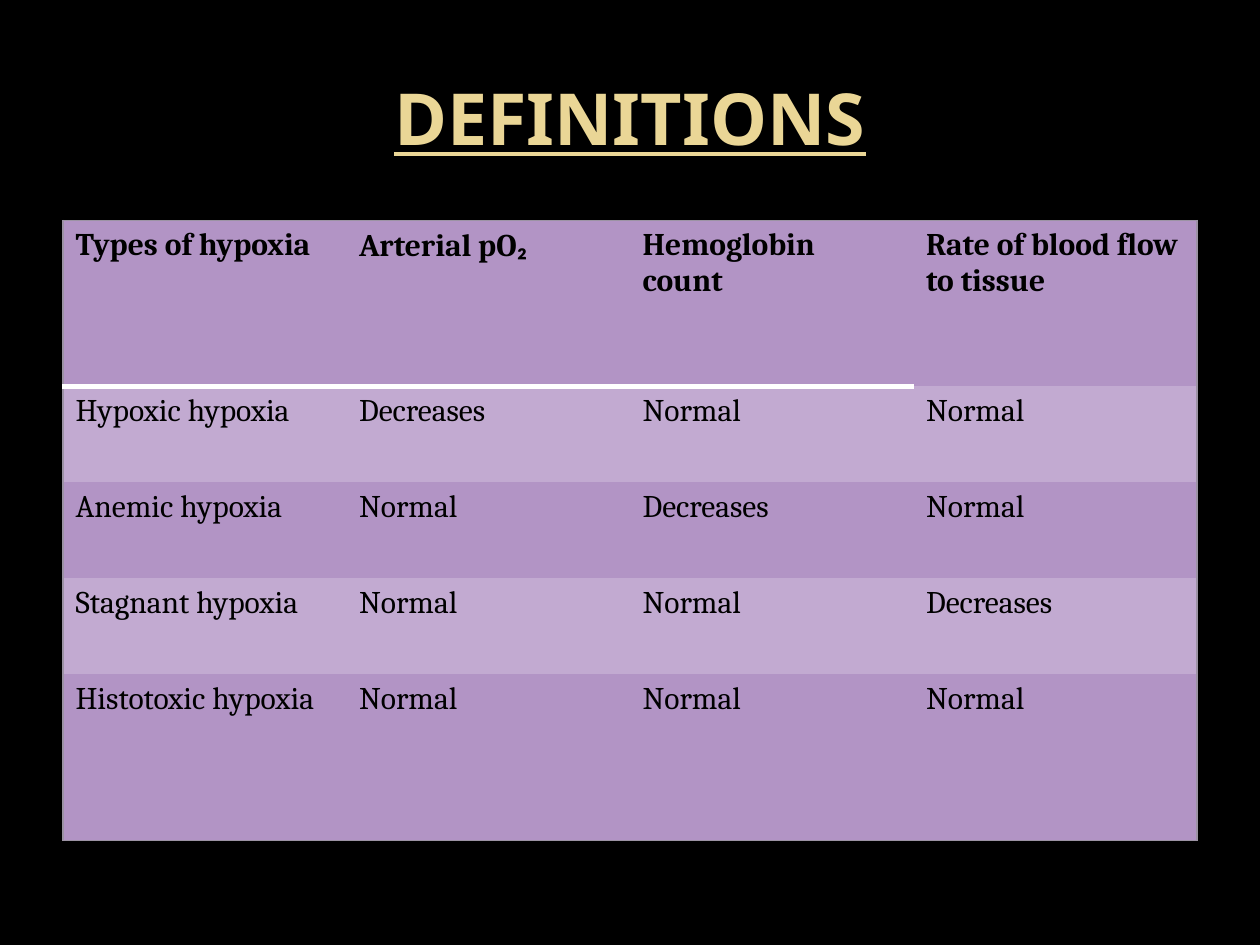
import pptx
import pptx.util
import pptx.oxml
import pptx.oxml.ns
import pptx.dml.color
import pptx.enum.text
import dataclasses

Pt = pptx.util.Pt
RGB = pptx.dml.color.RGBColor.from_string
TEXT = pptx.enum.text


@dataclasses.dataclass(frozen=True)
class Theme:
    back: str = "000000"
    gold: str = "EAD696"
    ink: str = "000000"
    dark: str = "B294C5"
    light: str = "C2AAD1"
    edge: str = "9C93A4"
    rule: str = "FFFFFF"
    head: float = 41
    body: float = 18
    plain: str = "{2D5ABB26-0587-4C30-8999-92F81FD0307C}"


class Deck:
    def __init__(self, theme):
        self.theme = theme
        self.show = pptx.Presentation()
        self.show.slide_width, self.show.slide_height = Pt(720), Pt(540)
        self.slide = self.show.slides.add_slide(self.show.slide_layouts[6])
        self.fill(self.slide.background, theme.back)

    def fill(self, item, color):
        item.fill.solid()
        item.fill.fore_color.rgb = RGB(color)

    def label(self, para, text, color, **form):
        run = para.add_run()
        run.text = text
        run.font.color.rgb = RGB(color)
        for key, value in form.items():
            setattr(run.font, key, value)

    def title(self, text, left, top, width, height):
        box = self.slide.shapes.add_textbox(Pt(left), Pt(top), Pt(width), Pt(height))
        frame = box.text_frame
        form = {"word_wrap": True, "auto_size": TEXT.MSO_AUTO_SIZE.NONE,
                "vertical_anchor": TEXT.MSO_ANCHOR.MIDDLE}
        for key, value in form.items():
            setattr(frame, key, value)
        para = frame.paragraphs[0]
        para.alignment = TEXT.PP_ALIGN.CENTER
        self.label(para, text, self.theme.gold, name="Noto Sans",
                   size=Pt(self.theme.head), bold=True, underline=True)

    def border(self, cell, sides):
        props = cell._tc.get_or_add_tcPr()
        for spot, side in enumerate(s for s in "LRTB" if s in sides):
            color, width = sides[side]
            props.insert(spot, pptx.oxml.parse_xml(
                f'<a:ln{side} {pptx.oxml.ns.nsdecls("a")} w="{Pt(width)}">'
                f'<a:solidFill><a:srgbClr val="{color}"/></a:solidFill></a:ln{side}>'))

    def table(self, rows, left, top, widths, heights):
        theme = self.theme
        last, end = len(rows) - 1, len(widths) - 1
        grid = self.slide.shapes.add_table(
            len(rows), len(widths), Pt(left), Pt(top),
            Pt(sum(widths)), Pt(sum(heights))).table
        grid.first_row = grid.horz_banding = False
        grid._tbl.tblPr.find(pptx.oxml.ns.qn("a:tableStyleId")).text = theme.plain
        for col, width in zip(grid.columns, widths):
            col.width = Pt(width)
        for r, (row, height) in enumerate(zip(rows, heights)):
            grid.rows[r].height = Pt(height)
            for c, text in enumerate(row):
                cell = grid.cell(r, c)
                self.fill(cell, theme.light if r % 2 else theme.dark)
                edges = {"L": c == 0, "R": c == end, "T": r == 0, "B": r == last}
                sides = {s: (theme.edge, 0.75) for s, on in edges.items() if on}
                if r == 0 and c < end:
                    sides["B"] = (theme.rule, 3)
                self.border(cell, sides)
                base, sub, _ = text.partition("₂")
                for part, font in ((base, "Cambria"), (sub, "Calibri")):
                    if part:
                        self.label(cell.text_frame.paragraphs[0], part, theme.ink,
                                   name=font, size=Pt(theme.body), bold=r == 0)


def main():
    deck = Deck(Theme())
    deck.title("DEFINITIONS", 36, 21.6, 648, 90)
    rows = [
        ("Types of hypoxia", "Arterial pO₂", "Hemoglobin count",
         "Rate of blood flow to tissue"),
        ("Hypoxic hypoxia", "Decreases", "Normal", "Normal"),
        ("Anemic hypoxia", "Normal", "Decreases", "Normal"),
        ("Stagnant hypoxia", "Normal", "Normal", "Decreases"),
        ("Histotoxic hypoxia", "Normal", "Normal", "Normal"),
    ]
    deck.table(rows, 36, 126, [162] * 4, [94.8] + [54.86] * 3 + [94.8])
    deck.show.save("out.pptx")


if __name__ == "__main__":
    main()
